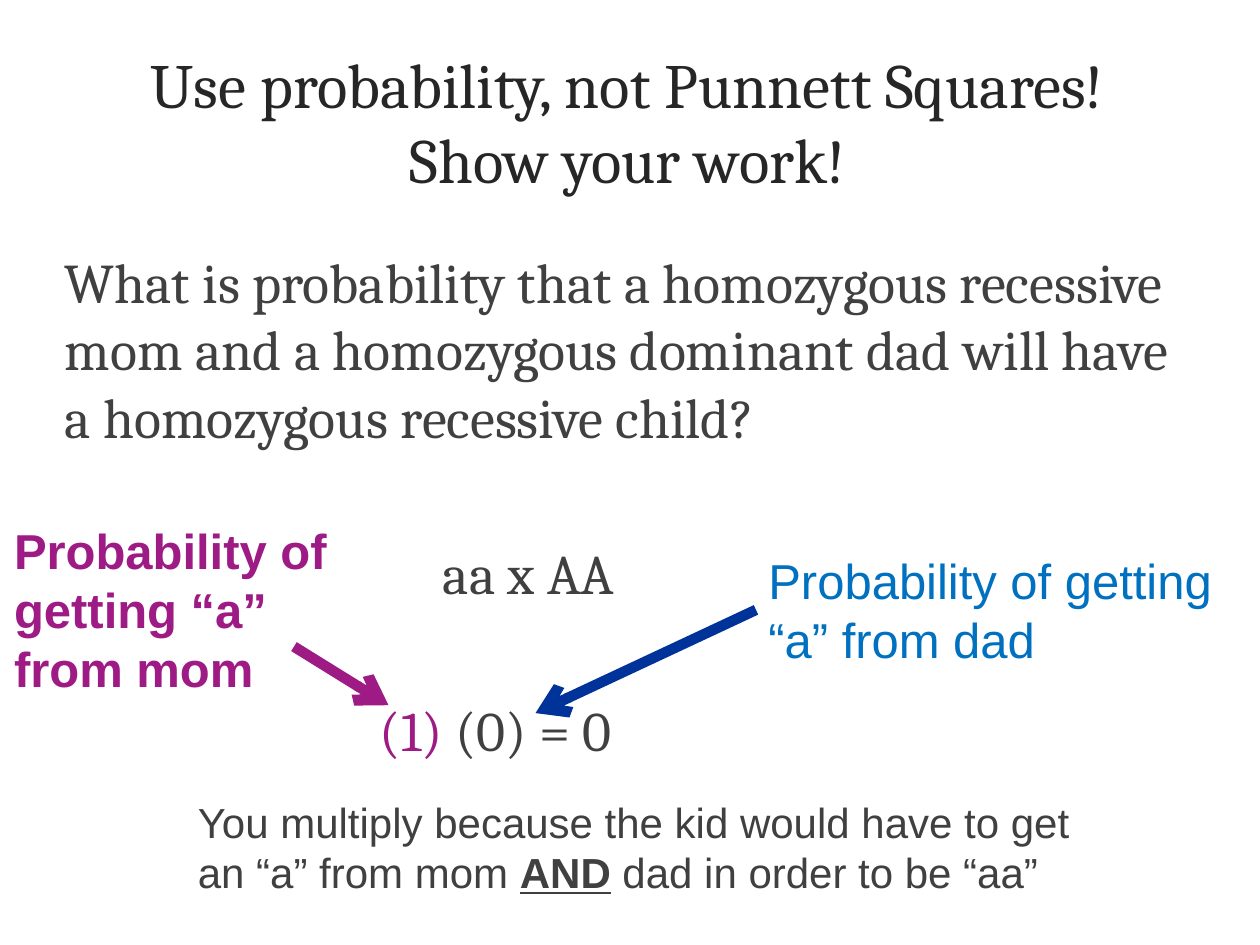
from dataclasses import dataclass

from lxml.etree import SubElement
from pptx import Presentation
from pptx.dml.color import RGBColor
from pptx.enum.shapes import MSO_CONNECTOR
from pptx.enum.text import MSO_ANCHOR, PP_ALIGN
from pptx.oxml.ns import qn
from pptx.util import Pt


@dataclass(frozen=True)
class Theme:
    serif: str = "Cambria"
    sans: str = "Arial"
    title_color: str = "262626"
    text: str = "404040"
    mom: str = "9E1A85"
    dad: str = "0070C0"
    dad_arrow: str = "003399"
    title_size: int = 36
    body_size: int = 32
    label_size: int = 28
    note_size: int = 24
    arrow_width: int = 6


class SlideBuilder:
    """Adds styled text and arrows to the current slide."""

    def __init__(self, slide, theme):
        self.slide = slide
        self.theme = theme

    def text_box(self, left, top, width, height, anchor=MSO_ANCHOR.TOP):
        shape = self.slide.shapes.add_textbox(Pt(left), Pt(top), Pt(width), Pt(height))
        frame = shape.text_frame
        frame.word_wrap = True
        frame.vertical_anchor = anchor
        return frame

    def style(self, paragraph, font_name, size, color):
        font = paragraph.font
        font.name = font_name
        font.size = Pt(size)
        font.color.rgb = RGBColor.from_string(color)

    def title(self, text, *box):
        paragraph = self.text_box(*box, anchor=MSO_ANCHOR.MIDDLE).paragraphs[0]
        paragraph.text = text
        paragraph.alignment = PP_ALIGN.CENTER
        self.style(paragraph, self.theme.serif, self.theme.title_size, self.theme.title_color)

    def body(self, question, steps, gap, *box):
        frame = self.text_box(*box)
        paragraph = frame.paragraphs[0]
        paragraph.text = question
        self.style(paragraph, self.theme.serif, self.theme.body_size, self.theme.text)
        for indent, runs in steps:
            paragraph = frame.add_paragraph()
            paragraph.space_before = Pt(gap)
            paragraph._p.get_or_add_pPr().set("marL", str(Pt(indent)))
            self.style(paragraph, self.theme.serif, self.theme.body_size, self.theme.text)
            for text, color in runs:
                run = paragraph.add_run()
                run.text = text
                run.font.color.rgb = RGBColor.from_string(color)

    def label(self, text, color, *box, bold=False):
        paragraph = self.text_box(*box).paragraphs[0]
        paragraph.text = text
        self.style(paragraph, self.theme.sans, self.theme.label_size, color)
        paragraph.font.bold = bold

    def note(self, before, stressed, after, *box):
        paragraph = self.text_box(*box).paragraphs[0]
        self.style(paragraph, self.theme.sans, self.theme.note_size, self.theme.text)
        for text in (before, stressed, after):
            run = paragraph.add_run()
            run.text = text
            if text == stressed:
                run.font.bold = run.font.underline = True

    def arrow(self, color, *ends):
        connector = self.slide.shapes.add_connector(MSO_CONNECTOR.STRAIGHT, *map(Pt, ends))
        connector.line.width = Pt(self.theme.arrow_width)
        connector.line.color.rgb = RGBColor.from_string(color)
        SubElement(connector.line._get_or_add_ln(), qn("a:tailEnd"), type="arrow")
        SubElement(connector._element.spPr, qn("a:effectLst"))


def main():
    theme = Theme()
    presentation = Presentation()
    presentation.slide_width, presentation.slide_height = Pt(720), Pt(540)
    slide = presentation.slides.add_slide(presentation.slide_layouts[6])
    builder = SlideBuilder(slide, theme)

    builder.title("Use probability, not Punnett Squares! Show your work!", 42, 12, 633, 114)
    builder.body(
        "What is probability that a homozygous recessive mom and a homozygous "
        "dominant dad will have a homozygous recessive child?",
        [
            (216, [("aa x AA", theme.text)]),
            (180, [("(1) ", theme.mom), ("(0) = 0", theme.text)]),
        ],
        51, 30, 138, 648, 311,
    )
    builder.label("Probability of getting “a” from mom", theme.mom, 1, 294, 210, 109, bold=True)
    builder.label("Probability of getting “a” from dad", theme.dad, 432, 311, 276, 75)
    builder.note(
        "You multiply because the kid would have to get an “a” from mom ",
        "AND",
        " dad in order to be “aa”",
        106, 451.5, 524, 65.5,
    )
    builder.arrow(theme.mom, 168, 369.5, 222, 403)
    builder.arrow(theme.dad_arrow, 432, 348.5, 306, 407.5)
    presentation.save("out.pptx")


if __name__ == "__main__":
    main()
